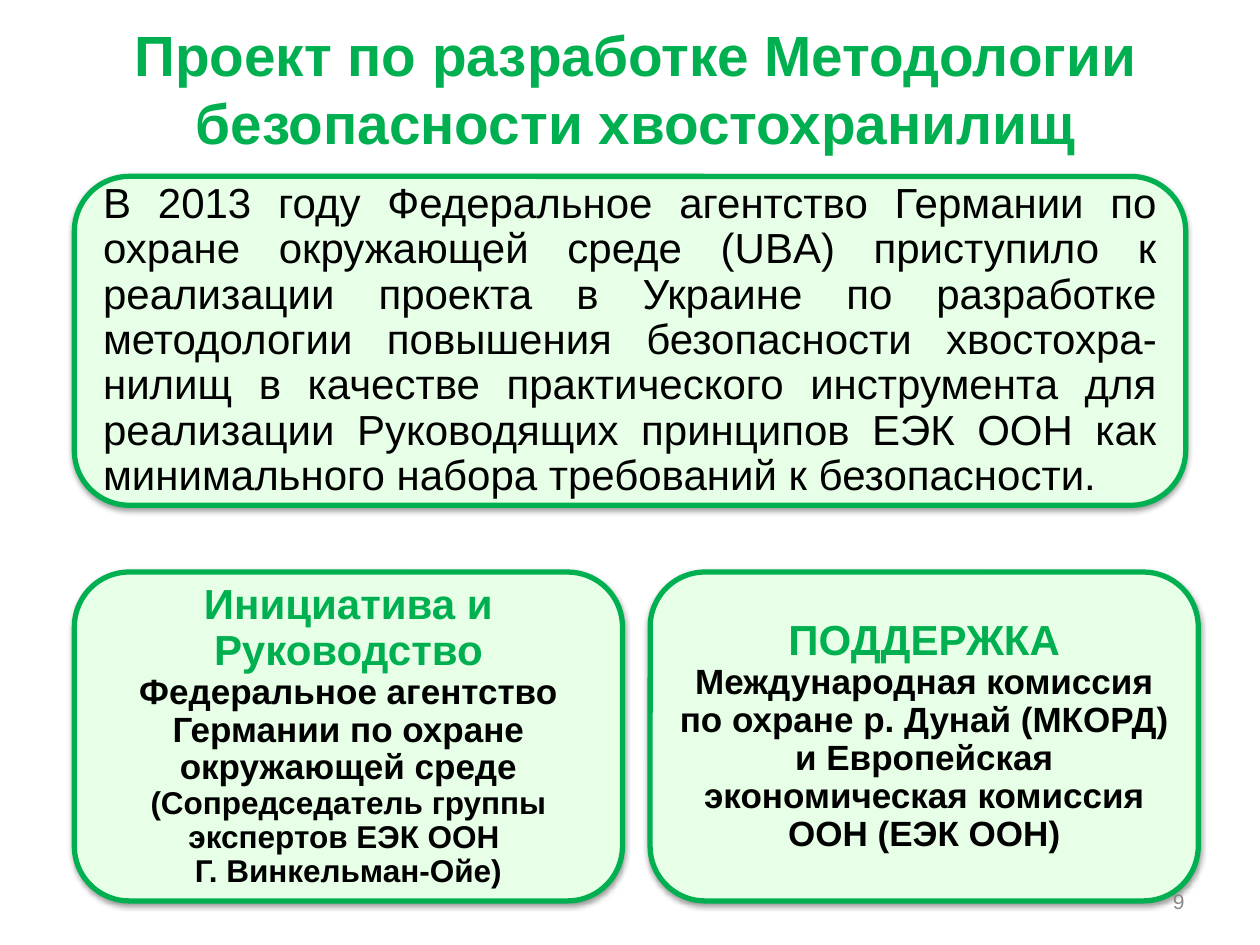
from lxml import etree
from pptx import Presentation
from pptx.dml.color import RGBColor
from pptx.enum.shapes import MSO_SHAPE
from pptx.enum.text import MSO_ANCHOR, MSO_AUTO_SIZE, PP_ALIGN
from pptx.oxml import parse_xml
from pptx.oxml.ns import nsdecls
from pptx.util import Inches, Pt

GREEN = RGBColor(0x00, 0xB0, 0x50)
PALE_GREEN = RGBColor(0xE6, 0xFF, 0xE6)
BLACK = RGBColor(0x00, 0x00, 0x00)
GRAY = RGBColor(0x89, 0x89, 0x89)
SHADOW = (
    f'<a:effectLst {nsdecls("a")}>'
    '<a:outerShdw blurRad="40000" dist="20000" dir="5400000" rotWithShape="0">'
    '<a:srgbClr val="000000"><a:alpha val="38000"/></a:srgbClr>'
    '</a:outerShdw></a:effectLst>'
)


def add_text(paragraph, text, size, color, bold=False):
    for index, line in enumerate(text.split("\n")):
        if index:
            paragraph.add_line_break()
        if line:
            run = paragraph.add_run()
            run.text = line
            run.font.name = "Arial"
            run.font.size = Pt(size)
            run.font.bold = bold
            run.font.color.rgb = color


presentation = Presentation()
presentation.slide_width = Inches(10)
presentation.slide_height = Inches(7.5)
slide = presentation.slides.add_slide(presentation.slide_layouts[5])

title = slide.shapes.title
title.left, title.top = Inches(0.28), Inches(0.3)
title.width, title.height = Inches(9.53), Inches(0.79)
title.text_frame.auto_size = MSO_AUTO_SIZE.NONE
title.text_frame.vertical_anchor = MSO_ANCHOR.MIDDLE
title_paragraph = title.text_frame.paragraphs[0]
title_paragraph.alignment = PP_ALIGN.CENTER
add_text(title_paragraph, "Проект по разработке Методологии безопасности хвостохранилищ",
         32.4, GREEN, bold=True)

project = [
    ("В 2013 году Федеральное агентство Германии по охране окружающей среде (UBA) "
     "приступило к реализации проекта в Украине по разработке методологии повышения "
     "безопасности хвостохра-нилищ в качестве практического инструмента для реализации "
     "Руководящих принципов ЕЭК ООН как минимального набора требований к безопасности.",
     24, BLACK, False),
]
leadership = [
    ("Инициатива и Руководство\n", 24, GREEN, True),
    ("Федеральное агентство Германии по охране окружающей среде ", 20, BLACK, True),
    ("(Сопредседатель группы экспертов ЕЭК ООН \nГ. Винкельман-Ойе)", 18, BLACK, True),
]
support = [
    ("ПОДДЕРЖКА\n", 24, GREEN, True),
    ("Международная комиссия по охране р. Дунай (МКОРД) и Европейская "
     "экономическая комиссия ООН (ЕЭК ООН)", 20, BLACK, True),
]

panel_height = 2.61
text_inset = 0.13
panels = [
    (0.59, 1.4, 8.82, PP_ALIGN.JUSTIFY, project),
    (0.59, 4.54, 4.35, PP_ALIGN.CENTER, leadership),
    (5.16, 4.54, 4.35, PP_ALIGN.CENTER, support),
]
for left, top, width, alignment, parts in panels:
    panel = slide.shapes.add_shape(MSO_SHAPE.ROUNDED_RECTANGLE, Inches(left), Inches(top),
                                   Inches(width), Inches(panel_height))
    panel.fill.solid()
    panel.fill.fore_color.rgb = PALE_GREEN
    panel.line.color.rgb = GREEN
    panel.line.width = Pt(3)
    panel.element.spPr.append(parse_xml(SHADOW))

    text_box = slide.shapes.add_textbox(
        Inches(left + text_inset), Inches(top + text_inset),
        Inches(width - 2 * text_inset), Inches(panel_height - 2 * text_inset))
    frame = text_box.text_frame
    frame.word_wrap = True
    frame.vertical_anchor = MSO_ANCHOR.MIDDLE
    frame.margin_left = frame.margin_right = Inches(0.1)
    frame.margin_top = frame.margin_bottom = Inches(0.1)
    paragraph = frame.paragraphs[0]
    paragraph.alignment = alignment
    paragraph.line_spacing = 0.9
    paragraph.space_after = Pt(18)
    for text, size, color, bold in parts:
        add_text(paragraph, text, size, color, bold=bold)

number_box = slide.shapes.add_textbox(Inches(7.17), Inches(6.95), Inches(2.33), Inches(0.4))
number_box.text_frame.word_wrap = True
number_box.text_frame.vertical_anchor = MSO_ANCHOR.MIDDLE
number_paragraph = number_box.text_frame.paragraphs[0]
number_paragraph.alignment = PP_ALIGN.RIGHT
add_text(number_paragraph, "9", 12, GRAY)

presentation.save("out.pptx")
